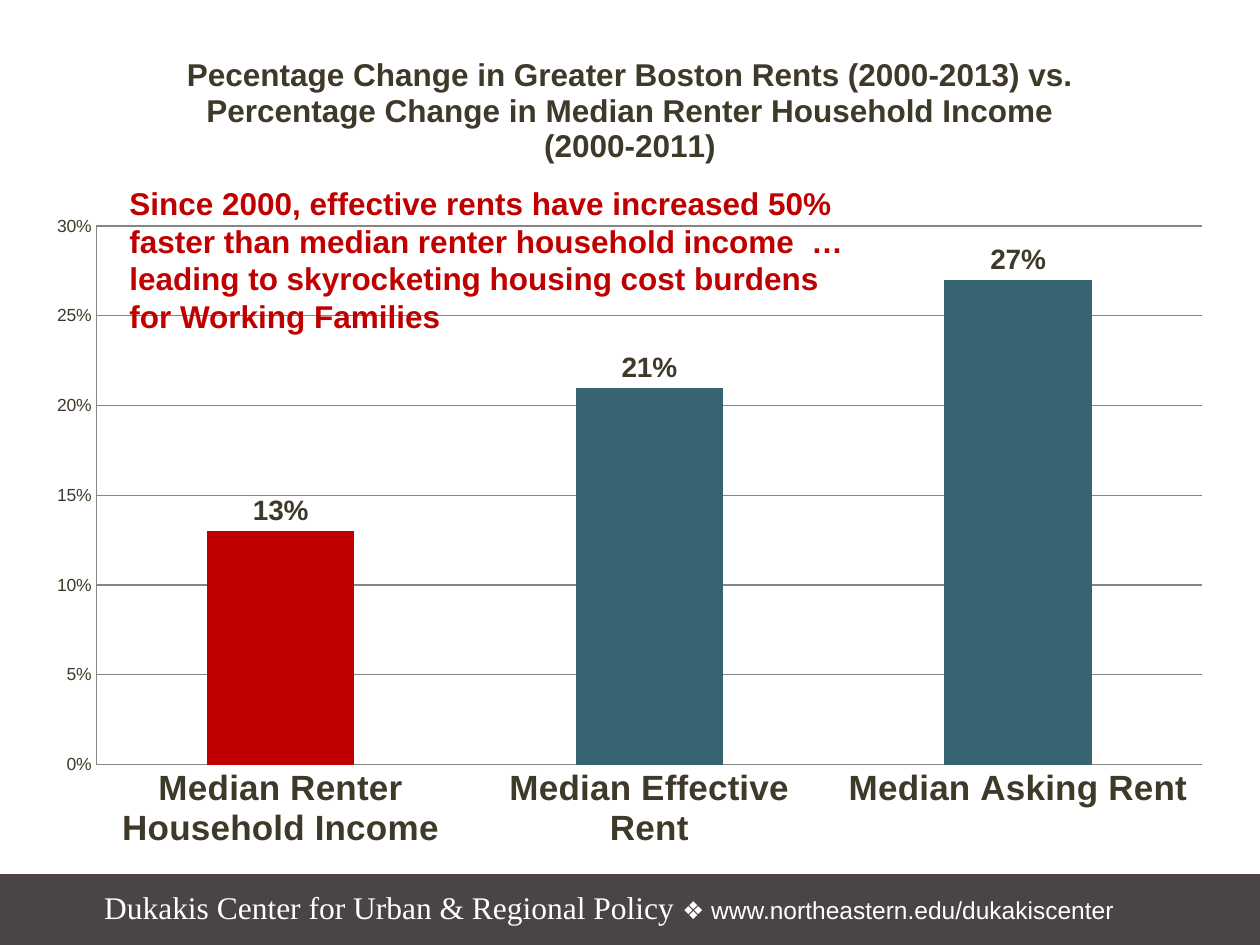
from dataclasses import dataclass

import pptx
import pptx.chart.data
import pptx.dml.color
import pptx.enum.chart
import pptx.enum.shapes
import pptx.enum.text
import pptx.oxml
import pptx.util
from pptx.util import Cm


@dataclass(frozen=True)
class Theme:
    dark: str = "3F3929"
    red: str = "C00000"
    teal: str = "366471"
    footer: str = "4B4444"
    white: str = "FFFFFF"
    grid: str = "868686"
    sans: str = "Arial"
    serif: str = "Times New Roman"
    heading: int = 18
    category: int = 20
    label: int = 16
    web: int = 14
    axis: int = 10


theme = Theme()


def style(font, size, color, name=theme.sans, bold=False):
    font.size = pptx.util.Pt(size)
    font.name = name
    font.bold = bold
    font.color.rgb = pptx.dml.color.RGBColor.from_string(color)


def place(element, x, y, size=None):
    """Fix a chart element's position, as fractions of the chart frame."""
    values = {"xMode": "edge", "yMode": "edge", "x": x, "y": y}
    if size:
        values = {"layoutTarget": "inner", **values, "w": size[0], "h": size[1]}
    layout = element.find(pptx.oxml.ns.qn("c:layout"))
    if layout is None:
        layout = pptx.oxml.parse_xml(f"<c:layout {pptx.oxml.ns.nsdecls('c')}/>")
        text = element.find(pptx.oxml.ns.qn("c:tx"))
        if text is None:
            element.insert(0, layout)
        else:
            text.addnext(layout)
    for child in list(layout):
        layout.remove(child)
    settings = "".join(f'<c:{key} val="{value}"/>' for key, value in values.items())
    layout.append(pptx.oxml.parse_xml(
        f"<c:manualLayout {pptx.oxml.ns.nsdecls('c')}>{settings}</c:manualLayout>"))


presentation = pptx.Presentation()
presentation.slide_width = Cm(25.4)
presentation.slide_height = Cm(19.05)
slide = presentation.slides.add_slide(presentation.slide_layouts[6])

# Footer
band = slide.shapes.add_shape(
    pptx.enum.shapes.MSO_SHAPE.RECTANGLE, Cm(-0.03), Cm(17.63), Cm(25.5), Cm(1.47))
band.shadow.inherit = False
band.fill.solid()
band.fill.fore_color.rgb = pptx.dml.color.RGBColor.from_string(theme.footer)
band.line.color.rgb = pptx.dml.color.RGBColor.from_string(theme.footer)
band.line.width = pptx.util.Pt(0.75)

footer = slide.shapes.add_textbox(Cm(1.85), Cm(17.78), Cm(21.67), Cm(1.02))
footer.text_frame.word_wrap = True
for text, size, name in (
    ("Dukakis Center for Urban & Regional Policy ", theme.heading, theme.serif),
    ("❖ www.northeastern.edu/dukakiscenter", theme.web, theme.sans),
):
    run = footer.text_frame.paragraphs[0].add_run()
    run.text = text
    style(run.font, size, theme.white, name)

# Chart
chart_data = pptx.chart.data.CategoryChartData(number_format="0%")
chart_data.categories = [
    "Median Renter Household Income", "Median Effective Rent", "Median Asking Rent"]
chart_data.add_series("Series 1", (0.13, 0.21, 0.27))
chart = slide.shapes.add_chart(
    pptx.enum.chart.XL_CHART_TYPE.COLUMN_CLUSTERED,
    Cm(0.69), Cm(0.43), Cm(24.03), Cm(16.99), chart_data).chart
chart.has_legend = False
style(chart.font, theme.axis, theme.dark)

chart.has_title = True
title_frame = chart.chart_title.text_frame
for index, line in enumerate((
    "Pecentage Change in Greater Boston Rents (2000-2013) vs.",
    "Percentage Change in Median Renter Household Income (2000-2011)",
)):
    paragraph = title_frame.add_paragraph() if index else title_frame.paragraphs[0]
    run = paragraph.add_run()
    run.text = line
    style(run.font, theme.heading, theme.dark, bold=True)
chart.chart_title.include_in_layout = False
plot_area = chart.plots[0]._element.getparent()
place(chart.chart_title._element, 0.125, 0.036)
place(plot_area, 0.052, 0.243, (0.928, 0.639))

value_axis = chart.value_axis
value_axis.minimum_scale = 0
value_axis.maximum_scale = 0.3
value_axis.major_unit = 0.05
value_axis.has_major_gridlines = True
value_axis.tick_labels.number_format = "0%"
value_axis.tick_labels.number_format_is_linked = False
style(value_axis.tick_labels.font, theme.axis, theme.dark)
style(chart.category_axis.tick_labels.font, theme.category, theme.dark, bold=True)
for axis in (value_axis, chart.category_axis):
    axis.major_tick_mark = pptx.enum.chart.XL_TICK_MARK.NONE
for line in (value_axis.major_gridlines.format.line, value_axis.format.line,
             chart.category_axis.format.line):
    line.color.rgb = pptx.dml.color.RGBColor.from_string(theme.grid)
    line.width = pptx.util.Pt(0.75)

plot = chart.plots[0]
plot.gap_width = 150
plot.vary_by_categories = False
series = plot.series[0]
series.format.fill.solid()
series.format.fill.fore_color.rgb = pptx.dml.color.RGBColor.from_string(theme.teal)
income_fill = series.points[0].format.fill
income_fill.solid()
income_fill.fore_color.rgb = pptx.dml.color.RGBColor.from_string(theme.red)

labels = series.data_labels
labels.show_value = True
labels.number_format = "0%"
labels.number_format_is_linked = False
labels.position = pptx.enum.chart.XL_LABEL_POSITION.OUTSIDE_END
style(labels.font, theme.label, theme.dark, bold=True)

# Message over the chart
message = slide.shapes.add_textbox(Cm(2.36), Cm(3.58), Cm(15.04), Cm(3.33))
message.text_frame.word_wrap = False
message.text_frame.auto_size = pptx.enum.text.MSO_AUTO_SIZE.SHAPE_TO_FIT_TEXT
for index, line in enumerate((
    "Since 2000, effective rents have increased 50%",
    "faster than median renter household income  …",
    "leading to skyrocketing housing cost burdens",
    "for Working Families",
)):
    frame = message.text_frame
    paragraph = frame.add_paragraph() if index else frame.paragraphs[0]
    run = paragraph.add_run()
    run.text = line
    style(run.font, theme.heading, theme.red, bold=True)

presentation.save("out.pptx")
